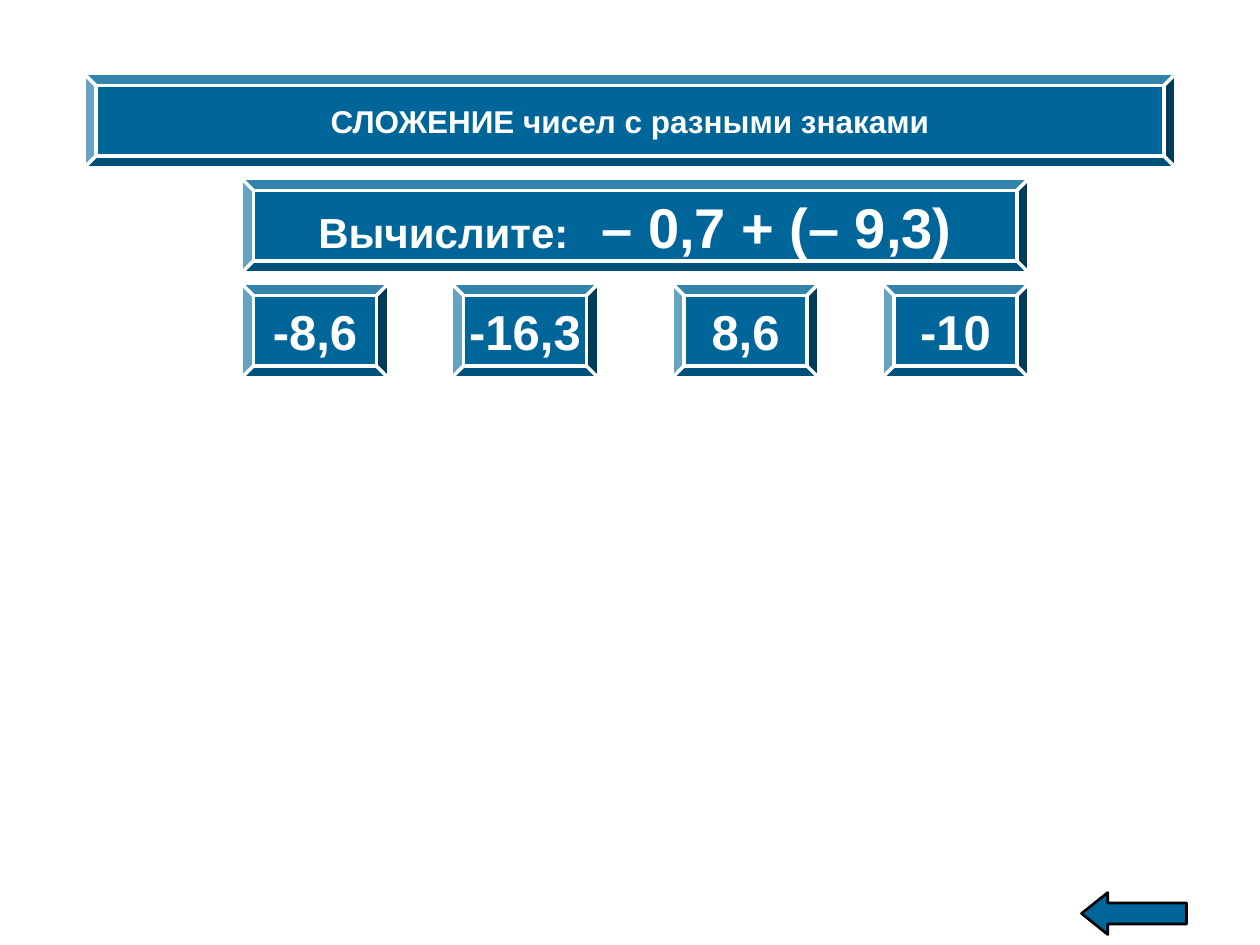
from pptx import Presentation
from pptx.dml.color import RGBColor
from pptx.enum.shapes import MSO_SHAPE
from pptx.enum.text import MSO_ANCHOR, PP_ALIGN
from pptx.util import Emu, Pt

BEVEL, LEFT_ARROW = MSO_SHAPE.BEVEL, MSO_SHAPE.LEFT_ARROW
MIDDLE, CENTER = MSO_ANCHOR.MIDDLE, PP_ALIGN.CENTER

PX = 9525  # 96 px to the inch
SLIDE_SIZE = (960, 720)
COLORS = {"panel": "006699", "light": "FFFFFF", "dark": "000000"}
TEXT_FORMAT = {"name": "Arial", "bold": True}

# Each run is (text, size in points)
TITLE = [("СЛОЖЕНИЕ чисел с разными знаками", 18)]
QUESTION = [("Вычислите:", 24), ("  ", 18), (" – 0,7 + (– 9,3)", 32)]
ANSWERS = ["-8,6", "-16,3", "8,6", "-10"]
ANSWER_SIZE = 28

ROW_TOP, ROW_HEIGHT, ROW_STEP = 56, 72, 80
TITLE_LEFT, TITLE_WIDTH = 64, 832
QUESTION_LEFT, QUESTION_WIDTH = 184, 600
ANSWER_WIDTH, ANSWER_STEP = 112, 160
MIDDLE_EXTRA = 8  # the two pairs of answers stand a little further apart
BACK_ARROW = (824, 680, 80, 32)


def color(name):
    return RGBColor.from_string(COLORS[name])


def add_filled_shape(slide, kind, box, line_color, line_width):
    shape = slide.shapes.add_shape(kind, *(Emu(length * PX) for length in box))
    shape.shadow.inherit = False
    shape.fill.solid()
    shape.fill.fore_color.rgb = color("panel")
    shape.line.color.rgb = color(line_color)
    shape.line.width = Pt(line_width)
    return shape


def add_panel(slide, row, left, width, runs):
    box = (left, ROW_TOP + row * ROW_STEP, width, ROW_HEIGHT)
    shape = add_filled_shape(slide, BEVEL, box, "light", 2)
    frame = shape.text_frame
    frame.word_wrap = False
    frame.vertical_anchor = MIDDLE
    paragraph = frame.paragraphs[0]
    paragraph.alignment = CENTER
    for text, size in runs:
        run = paragraph.add_run()
        run.text = text
        for key, value in TEXT_FORMAT.items():
            setattr(run.font, key, value)
        run.font.size = Pt(size)
        run.font.color.rgb = color("light")


def main():
    presentation = Presentation()
    presentation.slide_width, presentation.slide_height = (
        Emu(length * PX) for length in SLIDE_SIZE)
    slide = presentation.slides.add_slide(presentation.slide_layouts[6])

    arrow = add_filled_shape(slide, LEFT_ARROW, BACK_ARROW, "dark", 1.5)
    arrow.adjustments[0] = 0.5
    arrow.adjustments[1] = 0.625

    add_panel(slide, 0, TITLE_LEFT, TITLE_WIDTH, TITLE)
    add_panel(slide, 1, QUESTION_LEFT, QUESTION_WIDTH, QUESTION)
    for index, answer in enumerate(ANSWERS):
        extra = MIDDLE_EXTRA if index >= len(ANSWERS) // 2 else 0
        left = QUESTION_LEFT + index * ANSWER_STEP + extra
        add_panel(slide, 2, left, ANSWER_WIDTH, [(answer, ANSWER_SIZE)])

    presentation.save("out.pptx")


if __name__ == "__main__":
    main()
